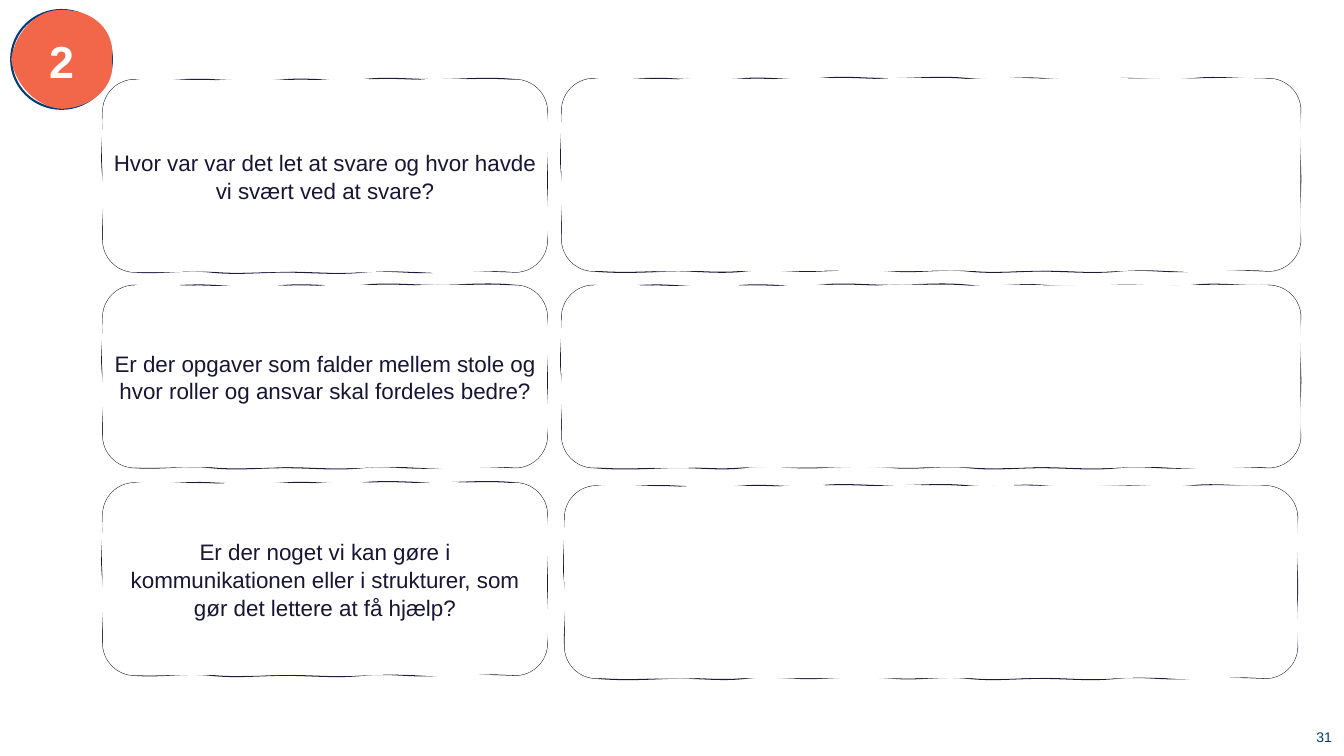
"""Build a slide with a numbered badge and three hand-drawn question and answer rows."""
from dataclasses import dataclass
from math import dist, sin
from typing import NamedTuple

from lxml.etree import SubElement
from pptx import Presentation
from pptx.dml.color import RGBColor
from pptx.enum.text import MSO_ANCHOR, PP_ALIGN
from pptx.oxml.ns import qn
from pptx.util import Emu, Inches, Pt

COLOURS = {"paper": "FFFFFF", "ink": "1E1B3A", "text": "181535", "coral": "F26749", "navy": "003B7A"}
WIDTH, HEIGHT = Inches(13.33), Inches(7.5)
CORNER = Inches(0.32)
WOBBLE = Inches(0.03)


class Area(NamedTuple):
    """Left, top, width and height in percent of the slide."""

    left: float
    top: float
    width: float
    height: float

    def lengths(self) -> list[int]:
        sizes = (WIDTH, HEIGHT, WIDTH, HEIGHT)
        return [Emu(round(share * size / 100)) for share, size in zip(self, sizes)]


class Pass(NamedTuple):
    """One trip of the pen round a shape."""

    flags: dict[str, str]
    step: float
    seed: float


@dataclass
class Lettering:
    """The look of a text."""

    size: int
    colour: str
    bold: bool = False
    align: PP_ALIGN = PP_ALIGN.CENTER
    anchor: MSO_ANCHOR = MSO_ANCHOR.MIDDLE
    inset: float = 0.08
    spacing: float = 1.04


@dataclass
class Sketch:
    """A hand-drawn shape, with the lean of its filling in inches."""

    area: Area
    fill: str = "paper"
    line: str = "ink"
    weight: float = 0.75
    lean: tuple[float, float] = (0, 0)
    round: bool = False
    text: str = ""
    lettering: Lettering | None = None


PASSES = (
    Pass({"fill": "none"}, 0.74, 1.7),
    Pass({"stroke": "0"}, 0.9, 4.3),
)
QUESTION = Lettering(16, "text")
QUESTIONS = (
    "Hvor var var det let at svare og hvor havde vi svært ved at svare?",
    "Er der opgaver som falder mellem stole og hvor roller og ansvar skal fordeles bedre?",
    "Er der noget vi kan gøre i kommunikationen eller i strukturer, som gør det lettere at få hjælp?",
)
QUESTION_COLUMN = (7.65, 33.08)
ROWS = ((10.53, 25.47), (37.73, 24.13), (63.87, 25.47))
ANSWERS = (
    Area(41.79, 10.4, 54.99, 25.47),
    Area(41.79, 37.73, 54.99, 24.13),
    Area(42.01, 64.27, 54.54, 25.47),
)
BADGE = Sketch(
    Area(0.83, 1.33, 7.5, 13.07), "coral", "navy", 1.5, (0.04, -0.01), True,
    "2", Lettering(32, "paper", bold=True),
)
PAGE_NUMBER = Area(94.52, 92.13, 4.58, 6.4)
PAGE_LETTERING = Lettering(10, "navy", False, PP_ALIGN.RIGHT, MSO_ANCHOR.BOTTOM, 0, 1)


def colour(name: str) -> RGBColor:
    """Look up a colour."""
    return RGBColor.from_string(COLOURS[name])


def apply(target, values: dict) -> None:
    """Set each named attribute of the target."""
    for name, value in values.items():
        setattr(target, name, value)


def write(shape, text: str, look: Lettering) -> None:
    """Put a text in a shape."""
    frame = shape.text_frame
    margins = {f"margin_{side}": Inches(look.inset) for side in ("left", "right", "top", "bottom")}
    apply(frame, {"word_wrap": True, "vertical_anchor": look.anchor, **margins})
    para = frame.paragraphs[0]
    apply(para, {"alignment": look.align, "line_spacing": look.spacing})
    span = para.add_run()
    span.text = text
    apply(span.font, {"name": "Arial", "size": Pt(look.size), "bold": look.bold})
    span.font.color.rgb = colour(look.colour)


def between(start, end, share: float, shift=(0, 0)) -> tuple[float, float]:
    """Find the point at a share of the way, moved by a shift."""
    return tuple(a + (b - a) * share + move for a, b, move in zip(start, end, shift))


def side_curves(start, end, pen: Pass, turn: int) -> list:
    """Split a side into wavy curves whose slopes meet at each joint."""
    length = dist(start, end)
    if length < 2:
        return []
    count = max(1, round(length / Inches(pen.step)))
    normal = ((start[1] - end[1]) / length, (end[0] - start[0]) / length)
    waves = [WOBBLE * sin(pen.seed * (7 * turn + 3 * joint + 1)) for joint in range(count + 1)]
    return [
        (
            between(start, end, (joint + 0.35) / count, [waves[joint] * part for part in normal]),
            between(start, end, (joint + 0.65) / count, [-waves[joint + 1] * part for part in normal]),
            between(start, end, (joint + 1) / count),
        )
        for joint in range(count)
    ]


def outline(width: int, height: int, radii, pen: Pass, lean) -> tuple:
    """Work out the start and the curves of a wobbly rounded rectangle."""
    across, down = radii
    corners = ((0, 0), (width, 0), (width, height), (0, height))
    entries = ((0, down), (width - across, 0), (width, height - down), (across, height))
    exits = ((across, 0), (width, down), (width - across, height), (0, height - down))
    curves = []
    for turn, (corner, entry, leave) in enumerate(zip(corners, entries, exits)):
        curves.append((between(entry, corner, 0.55, lean), between(leave, corner, 0.55, lean), leave))
        curves += side_curves(leave, entries[(turn + 1) % 4], pen, turn)
    return entries[0], curves


def add_point(parent, point) -> None:
    """Add a point to a path command."""
    SubElement(parent, qn("a:pt"), x=str(round(point[0])), y=str(round(point[1])))


def draw_sketch(page, sketch: Sketch) -> None:
    """Draw a loose outline with its filling laid over it."""
    left, top, width, height = sketch.area.lengths()
    right, bottom = left + width, top + height
    builder = page.shapes.build_freeform(left, top)
    builder.add_line_segments([(right, top), (right, bottom), (left, bottom)])
    shape = builder.convert_to_shape()
    paths = shape.element.spPr.find(qn("a:custGeom")).find(qn("a:pathLst"))
    paths.clear()
    radii = (width / 2, height / 2) if sketch.round else (CORNER, CORNER)
    for pen in PASSES:
        lean = [Inches(part) for part in sketch.lean] if "stroke" in pen.flags else (0, 0)
        start, curves = outline(width, height, radii, pen, lean)
        track = SubElement(paths, qn("a:path"), w=str(width), h=str(height), **pen.flags)
        add_point(SubElement(track, qn("a:moveTo")), start)
        for curve in curves:
            command = SubElement(track, qn("a:cubicBezTo"))
            for point in curve:
                add_point(command, point)
        SubElement(track, qn("a:close"))
    shape.shadow.inherit = False
    shape.fill.solid()
    shape.fill.fore_color.rgb = colour(sketch.fill)
    shape.line.color.rgb = colour(sketch.line)
    shape.line.width = Pt(sketch.weight)
    if sketch.lettering:
        write(shape, sketch.text, sketch.lettering)


def main() -> None:
    """Build and save the deck."""
    deck = Presentation()
    apply(deck, {"slide_width": WIDTH, "slide_height": HEIGHT})
    page = deck.slides.add_slide(deck.slide_layouts[6])
    draw_sketch(page, BADGE)
    left, width = QUESTION_COLUMN
    for (top, height), question in zip(ROWS, QUESTIONS):
        draw_sketch(page, Sketch(Area(left, top, width, height), text=question, lettering=QUESTION))
    for area in ANSWERS:
        draw_sketch(page, Sketch(area))
    write(page.shapes.add_textbox(*PAGE_NUMBER.lengths()), "31", PAGE_LETTERING)
    deck.save("out.pptx")


if __name__ == "__main__":
    main()
